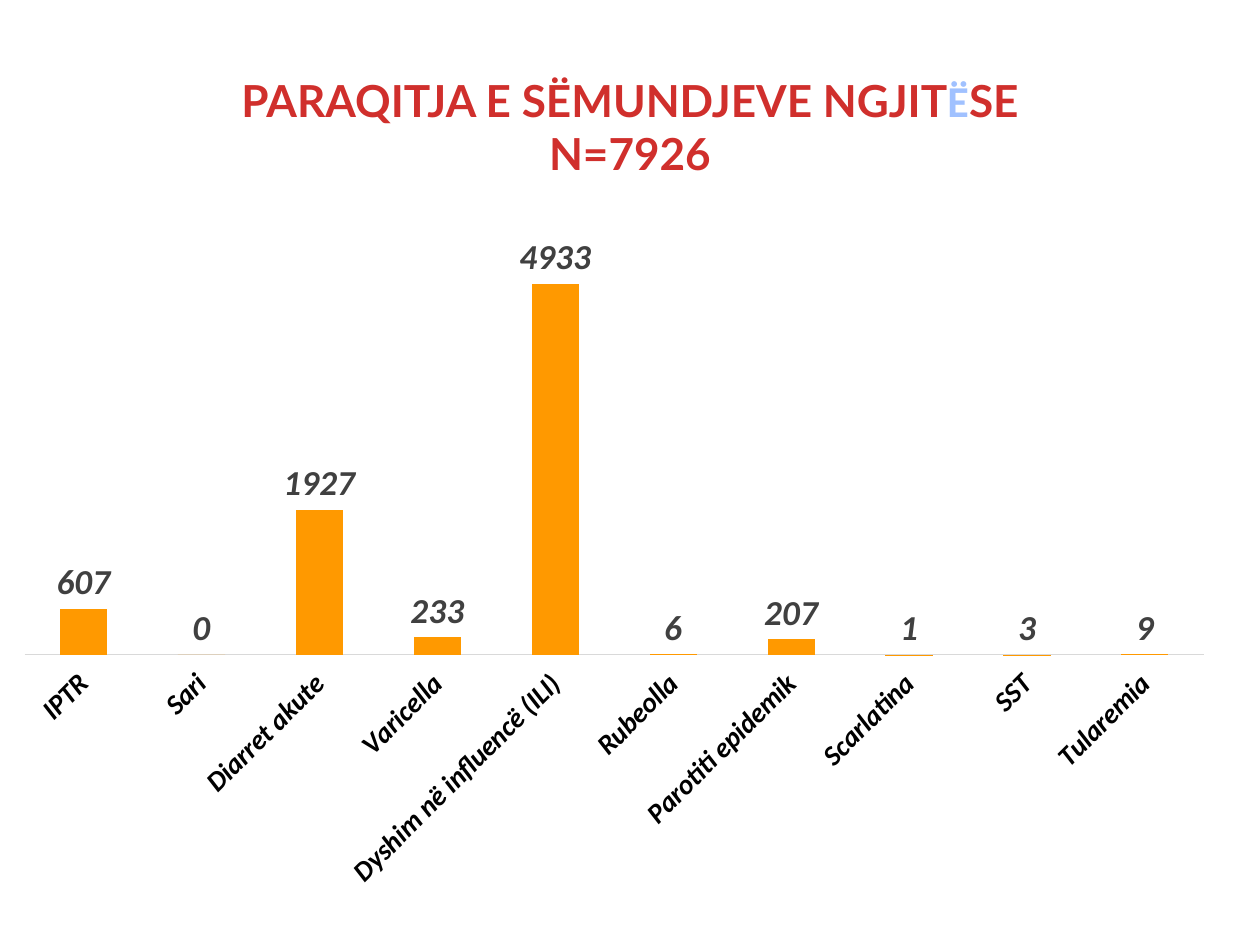
from pptx import Presentation
from pptx.chart.data import CategoryChartData
from pptx.dml.color import RGBColor
from pptx.enum.chart import XL_CHART_TYPE, XL_LABEL_POSITION, XL_TICK_LABEL_POSITION, XL_TICK_MARK
from pptx.enum.text import MSO_ANCHOR, MSO_AUTO_SIZE, PP_ALIGN
from pptx.util import Pt

COLORS = {
    "title": "D02F2C",
    "accent": "A0C1FF",
    "bar": "FF9900",
    "label": "404040",
    "text": "000000",
    "axis": "D9D9D9",
}

CASES = {
    "IPTR": 607,
    "Sari": 0,
    "Diarret akute": 1927,
    "Varicella": 233,
    "Dyshim në influencë (ILI)": 4933,
    "Rubeolla": 6,
    "Parotiti epidemik": 207,
    "Scarlatina": 1,
    "SST": 3,
    "Tularemia": 9,
}


class SlideBuilder:
    title_font = "Lato"
    body_font = "Calibri"

    def __init__(self, slide):
        self.slide = slide

    def style(self, font, size, color, name=body_font, bold=True, italic=False):
        font.name = name
        font.size = Pt(size)
        font.bold = bold
        font.italic = italic
        font.color.rgb = RGBColor.from_string(COLORS[color])

    def title(self, lines, left, top, width, height):
        """Each line is a list of (text, color, font name) runs."""
        shape = self.slide.shapes.title
        shape.left, shape.top = Pt(left), Pt(top)
        shape.width, shape.height = Pt(width), Pt(height)
        frame = shape.text_frame
        frame.word_wrap = True
        frame.auto_size = MSO_AUTO_SIZE.NONE
        frame.vertical_anchor = MSO_ANCHOR.MIDDLE
        paragraph = frame.paragraphs[0]
        paragraph.alignment = PP_ALIGN.CENTER
        for index, line in enumerate(lines):
            if index:
                paragraph.add_line_break()
            for text, color, name in line:
                run = paragraph.add_run()
                run.text = text
                self.style(run.font, 25.2, color, name)

    def column_chart(self, values, left, top, width, height):
        data = CategoryChartData()
        data.categories = list(values)
        data.add_series("Series 1", list(values.values()))
        chart = self.slide.shapes.add_chart(
            XL_CHART_TYPE.COLUMN_CLUSTERED, Pt(left), Pt(top), Pt(width), Pt(height), data
        ).chart
        chart.has_title = False
        chart.has_legend = False
        self.style(chart.font, 10, "text", bold=False)

        plot = chart.plots[0]
        plot.gap_width = 150
        plot.vary_by_categories = False
        bars = plot.series[0]
        bars.format.fill.solid()
        bars.format.fill.fore_color.rgb = RGBColor.from_string(COLORS["bar"])
        labels = bars.data_labels
        labels.show_value = True
        labels.position = XL_LABEL_POSITION.OUTSIDE_END
        self.style(labels.font, 20, "label", italic=True)

        chart.value_axis.has_major_gridlines = False
        chart.value_axis.visible = False
        axis = chart.category_axis
        axis.major_tick_mark = XL_TICK_MARK.NONE
        axis.tick_label_position = XL_TICK_LABEL_POSITION.LOW
        axis.format.line.width = Pt(0.75)
        axis.format.line.color.rgb = RGBColor.from_string(COLORS["axis"])
        self.style(axis.tick_labels.font, 16, "text", italic=True)
        # Slant the category names by 45 degrees
        axis._element.txPr.bodyPr.set("rot", "-2700000")


def main():
    presentation = Presentation()
    presentation.slide_width, presentation.slide_height = Pt(720), Pt(540)
    builder = SlideBuilder(presentation.slides.add_slide(presentation.slide_layouts[5]))
    heading = builder.title_font
    builder.title(
        [
            [
                ("PARAQITJA E SËMUNDJEVE NGJIT", "title", heading),
                ("Ë", "accent", builder.body_font),
                ("SE", "title", heading),
            ],
            [("N=7926", "title", heading)],
        ],
        0, 48, 720, 48,
    )
    builder.column_chart(CASES, 0, 108, 702, 408)
    presentation.save("out.pptx")


if __name__ == "__main__":
    main()
